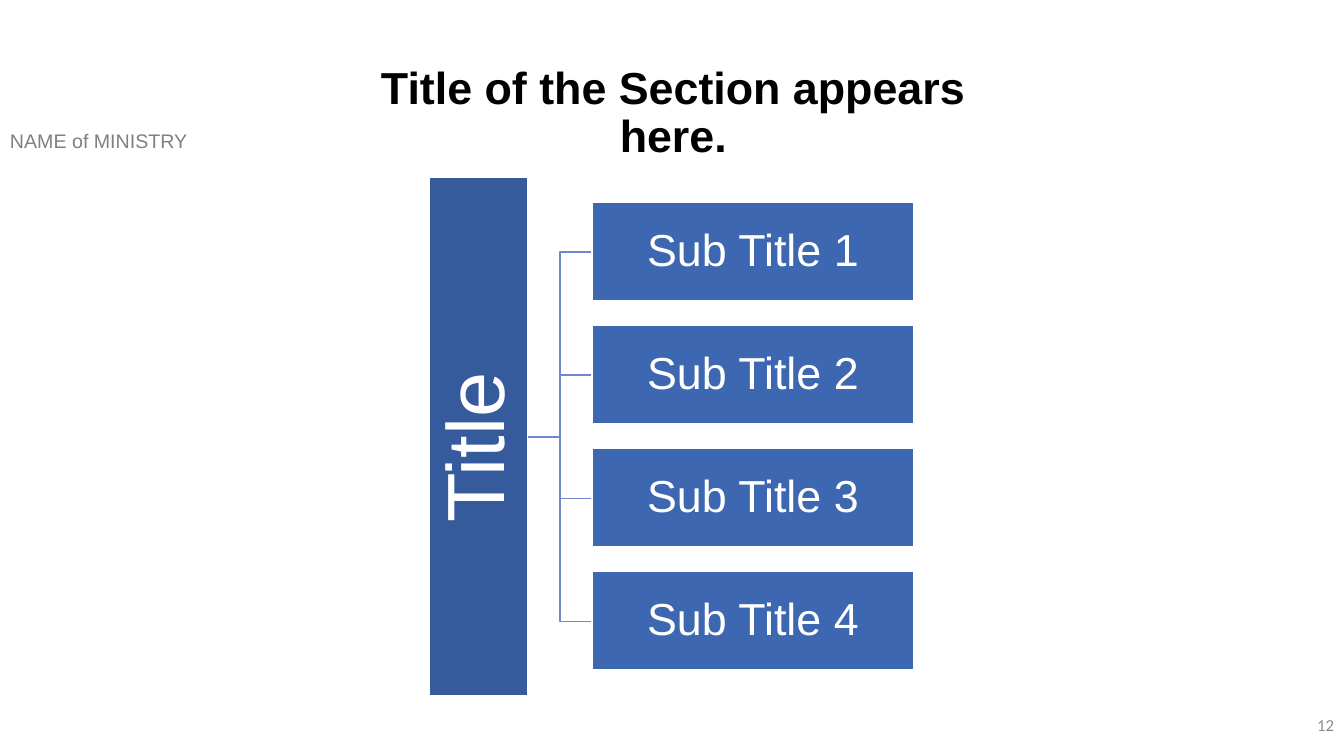
from dataclasses import dataclass

import pptx
import pptx.dml.color
import pptx.enum.shapes
import pptx.enum.text
import pptx.util

Pt = pptx.util.Pt
Align = pptx.enum.text.PP_ALIGN
Anchor = pptx.enum.text.MSO_ANCHOR


@dataclass(frozen=True)
class Theme:
    font: str = "Arial"
    plain: str = "Calibri"
    ink: str = "000000"
    white: str = "FFFFFF"
    gray: str = "808080"
    pale: str = "8C8C8C"
    root: str = "365B9D"
    leaf: str = "3E67B2"
    link: str = "6D89CB"
    head: int = 32
    big: int = 58
    sub: int = 32
    label: int = 14
    small: int = 12


theme = Theme()


def tint(code):
    return pptx.dml.color.RGBColor.from_string(code)


def write(shape, text, size, color, font=theme.font, align=Align.LEFT,
          anchor=Anchor.TOP, bold=False, space=1.0, inset=None):
    frame = shape.text_frame
    frame.word_wrap = True
    frame.vertical_anchor = anchor
    if inset is not None:
        frame.margin_left = frame.margin_right = Pt(inset)
        frame.margin_top = frame.margin_bottom = Pt(inset)
    line = frame.paragraphs[0]
    line.alignment = align
    line.line_spacing = space
    run = line.add_run()
    run.text = text
    run.font.name = font
    run.font.size = Pt(size)
    run.font.bold = bold
    run.font.color.rgb = tint(color)


def label(slide, box, text, size, color, **style):
    shape = slide.shapes.add_textbox(*map(Pt, box))
    write(shape, text, size, color, **style)


def block(slide, box, text, size, fill, inset, turn=0):
    shape = slide.shapes.add_shape(
        pptx.enum.shapes.MSO_SHAPE.RECTANGLE, *map(Pt, box))
    shape.rotation = turn
    shape.shadow.inherit = False
    shape.fill.solid()
    shape.fill.fore_color.rgb = tint(fill)
    shape.line.color.rgb = tint(theme.white)
    shape.line.width = Pt(1)
    write(shape, text, size, theme.white, align=Align.CENTER,
          anchor=Anchor.MIDDLE, space=0.9, inset=inset)


def link(slide, start, end):
    bend = (start[0] + end[0]) / 2
    path = slide.shapes.build_freeform(*start, scale=Pt(1))
    path.add_line_segments([(bend, start[1]), (bend, end[1]), end], close=False)
    shape = path.convert_to_shape()
    shape.shadow.inherit = False
    shape.fill.background()
    shape.line.color.rgb = tint(theme.link)
    shape.line.width = Pt(1)


def tree(slide, box, root, leaves):
    left, top, width, height = box
    thick = 70.3
    gap = 46
    step = thick * 1.25
    mid = top + height / 2
    edge = left + thick
    start = edge + gap
    first = mid - (step * (len(leaves) - 1) + thick) / 2
    tops = [first + step * i for i in range(len(leaves))]
    for y in reversed(tops):
        link(slide, (edge, mid), (start, y + thick / 2))
    bar = (left + (thick - height) / 2, mid - thick / 2, height, thick)
    block(slide, bar, root, theme.big, theme.root, 2.9, turn=270)
    for y, text in zip(tops, leaves):
        block(slide, (start, y, left + width - start, thick), text,
              theme.sub, theme.leaf, 1.4)


def frame(slide, box):
    left, top, width, height = box
    label(slide, (left, top + 88.6, 209, 24.5), "NAME of MINISTRY",
          theme.label, theme.gray)
    label(slide, (left + width - 216, top + height - 36.7, 216, 28.8), "12",
          theme.small, theme.pale, font=theme.plain, align=Align.RIGHT,
          anchor=Anchor.MIDDLE)


def main():
    deck = pptx.Presentation()
    deck.slide_width = Pt(960)
    deck.slide_height = Pt(540)
    slide = deck.slides.add_slide(deck.slide_layouts[6])
    frame(slide, (0, 0, 960, 540))
    tree(slide, (306.5, 126.7, 346.5, 370), "Title ",
         [f"Sub Title {n}" for n in range(1, 5)])
    label(slide, (236.2, 43.2, 489.6, 77), "Title of the Section appears here.",
          theme.head, theme.ink, align=Align.CENTER, bold=True, space=0.9)
    deck.save("out.pptx")


if __name__ == "__main__":
    main()
